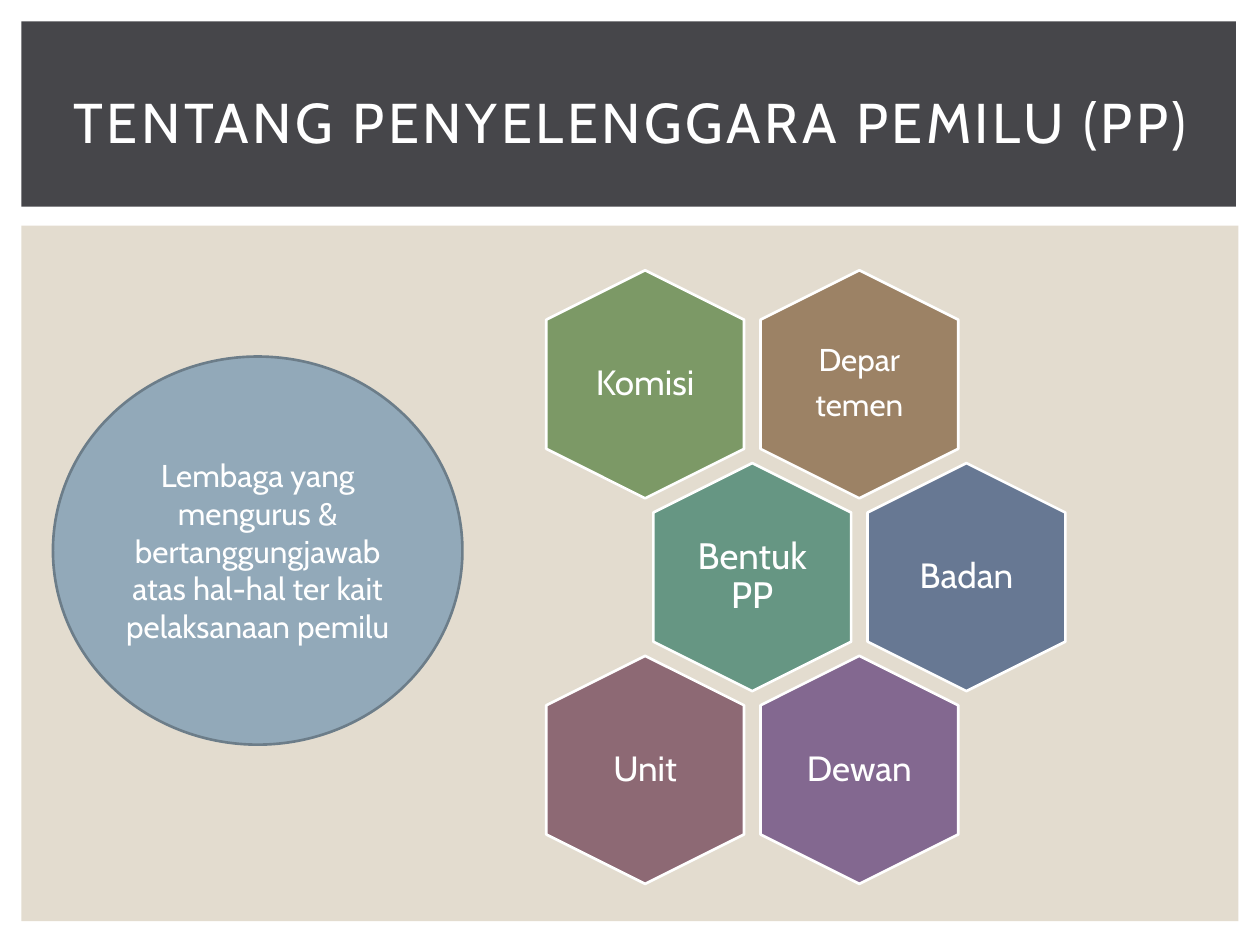
from pptx import Presentation
from pptx.dml.color import RGBColor
from pptx.enum.shapes import MSO_SHAPE
from pptx.enum.text import MSO_ANCHOR, PP_ALIGN
from pptx.util import Inches, Pt

# Content
WIDE, HIGH = 10, 7.5
TITLE = "TENTANG PENYELENGGARA PEMILU (PP)"
ROLE = ("Lembaga yang mengurus & bertanggungjawab "
        "atas hal-hal ter kait pelaksanaan pemilu")
COLORS = {
    "white": "FFFFFF", "sand": "E3DCCF", "dark": "46464A",
    "sky": "92A9B9", "edge": "6C7D89", "brown": "9C8265",
    "green": "7C9966", "teal": "669683", "blue": "677893",
    "violet": "836890", "rose": "8D6974",
}
# Label, half column, row, colour, text size, inset
CELLS = [
    ("Depar\ntemen", 2, 0, "brown", 18, 0.07),
    ("Komisi", 0, 0, "green", 20, 0),
    ("Bentuk PP", 1, 1, "teal", 21, 0.09),
    ("Badan", 3, 1, "blue", 20, 0),
    ("Dewan", 2, 2, "violet", 20, 0.08),
    ("Unit", 0, 2, "rose", 20, 0),
]
# Honeycomb: first centre, steps, hexagon and label sizes in inches
LEFT, TOP = 5.12, 3.05
STEP_X, STEP_Y = 0.85, 1.53
HEX = (1.81, 1.57)
LABEL = (1.08, 1.24)


def color(name):
    return RGBColor.from_string(COLORS[name])


def share(x, y, w, h):
    """Turn percentages of the slide into lengths."""
    return [Inches(part * full / 100)
            for part, full in zip((x, y, w, h), (WIDE, HIGH) * 2)]


def center(x, y, size):
    """Place a box of the given size around a point."""
    w, h = size
    return [Inches(n) for n in (x - w / 2, y - h / 2, w, h)]


def draw(slide, kind, box, fill, line=None):
    shape = slide.shapes.add_shape(kind, *box)
    shape.shadow.inherit = False
    shape.fill.solid()
    shape.fill.fore_color.rgb = color(fill)
    if line:
        shape.line.color.rgb = color(line)
        shape.line.width = Pt(1.5)
    else:
        shape.line.fill.background()
    return shape


def write(shape, text, size):
    frame = shape.text_frame
    frame.word_wrap = True
    frame.vertical_anchor = MSO_ANCHOR.MIDDLE
    frame.text = text
    for para in frame.paragraphs:
        para.alignment = PP_ALIGN.CENTER
        para.font.name = "Cabin"
        para.font.size = Pt(size)
        para.font.color.rgb = color("white")
    return frame


deck = Presentation()
deck.slide_width, deck.slide_height = Inches(WIDE), Inches(HIGH)
slide = deck.slides.add_slide(deck.slide_layouts[6])

# Panel and title band
draw(slide, MSO_SHAPE.RECTANGLE, share(1.7, 23.87, 96.6, 73.6), "sand")
draw(slide, MSO_SHAPE.RECTANGLE, share(1.7, 2.27, 96.4, 19.6), "dark")

# Honeycomb
for text, col, row, fill, size, inset in CELLS:
    x, y = LEFT + col * STEP_X, TOP + row * STEP_Y
    cell = draw(slide, MSO_SHAPE.HEXAGON, center(x, y, HEX), fill, "white")
    cell.rotation = 90
    cell.adjustments[0] = 0.25
    label = slide.shapes.add_textbox(*center(x, y, LABEL))
    frame = write(label, text, size)
    frame.margin_left = frame.margin_right = Inches(inset)
    frame.margin_top = frame.margin_bottom = Inches(inset)
    for para in frame.paragraphs:
        para.line_spacing = 0.9
        para.space_after = Pt(size * 0.35)

# Title with wide letter spacing
head = slide.shapes.add_textbox(*share(4.2, 5.2, 91.7, 15.33))
run = write(head, TITLE, 32).paragraphs[0].runs[0]
run.font._element.set("spc", "200")

# Role of the organiser
role = draw(slide, MSO_SHAPE.OVAL, share(4.2, 37.73, 32.5, 41.07), "sky", "edge")
write(role, ROLE, 18)

deck.save("out.pptx")
